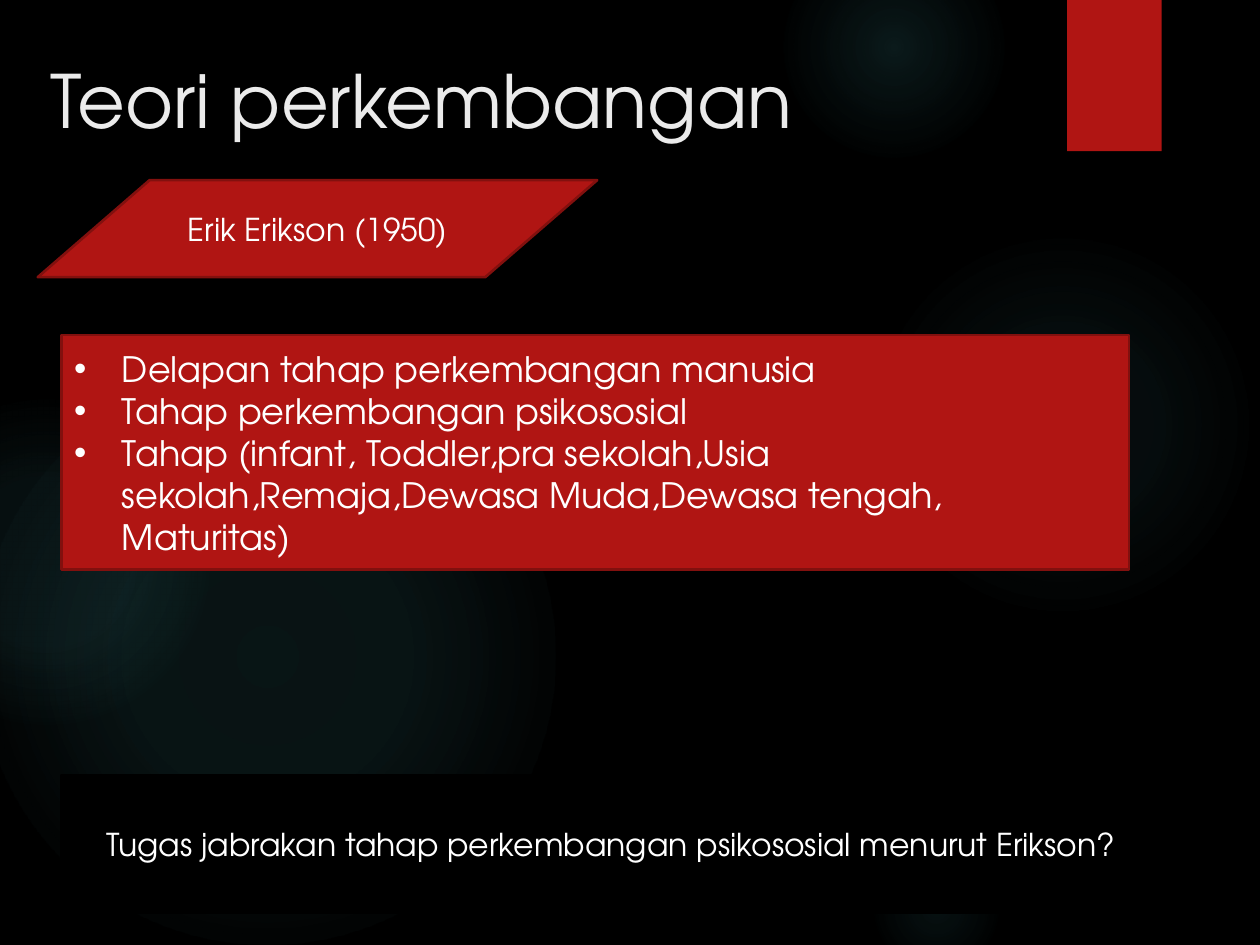
from lxml import etree
from pptx import Presentation
from pptx import util as u
from pptx.dml.color import RGBColor
from pptx.enum import shapes, text
from pptx.oxml import parse_xml
from pptx.oxml.ns import nsdecls, qn

SHAPE = shapes.MSO_SHAPE


def color(value):
    return RGBColor.from_string(value)


class Deck:
    font = "TeX Gyre Adventor"
    back, red, edge = "000000", "B01513", "82100E"
    glow_color, title_color, white = "50B9C1", "EBEBEB", "FFFFFF"

    def __init__(self, prs):
        self.s = prs.slides.add_slide(prs.slide_layouts[6])
        fill = self.s.background.fill
        fill.solid()
        fill.fore_color.rgb = color(self.back)

    def shape(self, kind, x, y, w, h, fill=None, line=None):
        sp = self.s.shapes.add_shape(kind, *map(u.Inches, (x, y, w, h)))
        sp.shadow.inherit = False
        if fill:
            sp.fill.solid()
            sp.fill.fore_color.rgb = color(fill)
        else:
            sp.fill.background()
        if line:
            sp.line.color.rgb = color(line)
            sp.line.width = u.Pt(1.5)
        else:
            sp.line.fill.background()
        return sp

    def glow(self, x, y, size, stops):
        """Circle that fades outwards; stops are (position %, opacity %)."""
        sp = self.shape(SHAPE.OVAL, x, y, size, size)
        gs = "".join(
            f'<a:gs pos="{pos * 1000}"><a:srgbClr val="{self.glow_color}">'
            f'<a:alpha val="{alpha * 1000}"/></a:srgbClr></a:gs>'
            for pos, alpha in stops)
        grad = parse_xml(
            f'<a:gradFill {nsdecls("a")} rotWithShape="1"><a:gsLst>{gs}</a:gsLst>'
            '<a:path path="circle"><a:fillToRect l="50000" t="50000" '
            'r="50000" b="50000"/></a:path></a:gradFill>')
        pr = sp._element.spPr
        pr.replace(pr.find(qn("a:noFill")), grad)

    def shadow(self, sp):
        effects = sp._element.spPr.find(qn("a:effectLst"))
        effects.append(parse_xml(
            f'<a:outerShdw {nsdecls("a")} blurRad="{u.Pt(3)}" dist="{u.Pt(2)}" '
            'dir="5400000" rotWithShape="0"><a:srgbClr val="000000">'
            '<a:alpha val="45000"/></a:srgbClr></a:outerShdw>'))

    def label(self, sp, lines, size, ink=None, align=text.PP_ALIGN.LEFT, bullets=False):
        tf = sp.text_frame
        tf.word_wrap = True
        tf.vertical_anchor = text.MSO_ANCHOR.MIDDLE
        for i, line in enumerate(lines):
            p = tf.add_paragraph() if i else tf.paragraphs[0]
            p.text = line
            p.alignment = align
            if bullets:
                pr = p._p.get_or_add_pPr()
                pr.set("marL", str(u.Inches(0.38)))
                pr.set("indent", str(-u.Inches(0.38)))
                etree.SubElement(pr, qn("a:buFont")).set("typeface", "Arial")
                etree.SubElement(pr, qn("a:buChar")).set("char", "•")
            p.font.name = self.font
            p.font.size = u.Pt(size)
            p.font.color.rgb = color(ink or self.white)

    def title(self, x, y, w, h, line):
        box = self.s.shapes.add_textbox(*map(u.Inches, (x, y, w, h)))
        self.label(box, [line], 42, self.title_color)


def main():
    prs = Presentation()
    prs.slide_width, prs.slide_height = u.Inches(10), u.Inches(7.5)
    deck = Deck(prs)
    center = text.PP_ALIGN.CENTER

    # Background glows
    for x, y, size, stops in [
        (6.89, 1.83, 3.08, [(0, 7), (36, 6), (69, 0)]),
        (6.22, -0.5, 1.75, [(0, 14), (36, 7), (73, 0)]),
        (6.89, 6.67, 1.08, [(0, 9), (36, 5), (66, 0)]),
        (-0.17, 2.92, 4.58, [(0, 11), (36, 10), (75, 0)]),
        (-0.92, 3.17, 2.58, [(0, 8), (36, 8), (72, 0)]),
    ]:
        deck.glow(x, y, size, stops)

    # Corner tab and title
    tab = deck.shape(SHAPE.RECTANGLE, 8.47, 0, 0.75, 1.2, deck.red)
    deck.shadow(tab)
    deck.title(0.3, 0.35, 7.72, 0.87, "Teori perkembangan")

    # Theorist
    sp = deck.shape(SHAPE.FLOWCHART_DATA, 0.3, 1.43, 4.44, 0.77, deck.red, deck.edge)
    deck.label(sp, ["Erik Erikson (1950)"], 18, align=center)

    # Stages
    sp = deck.shape(SHAPE.RECTANGLE, 0.49, 2.66, 8.47, 1.86, deck.red, deck.edge)
    deck.label(sp, [
        "Delapan tahap perkembangan manusia",
        "Tahap perkembangan psikososial",
        "Tahap (infant, Toddler,pra sekolah,Usia "
        "sekolah,Remaja,Dewasa Muda,Dewasa tengah, Maturitas)",
    ], 20, bullets=True)

    # Assignment
    sp = deck.shape(SHAPE.RECTANGLE, 0.49, 6.15, 8.72, 1.09, deck.back, deck.back)
    deck.label(sp, ["Tugas jabrakan tahap perkembangan psikososial menurut Erikson?"],
               18, align=center)

    prs.save("out.pptx")


if __name__ == "__main__":
    main()
